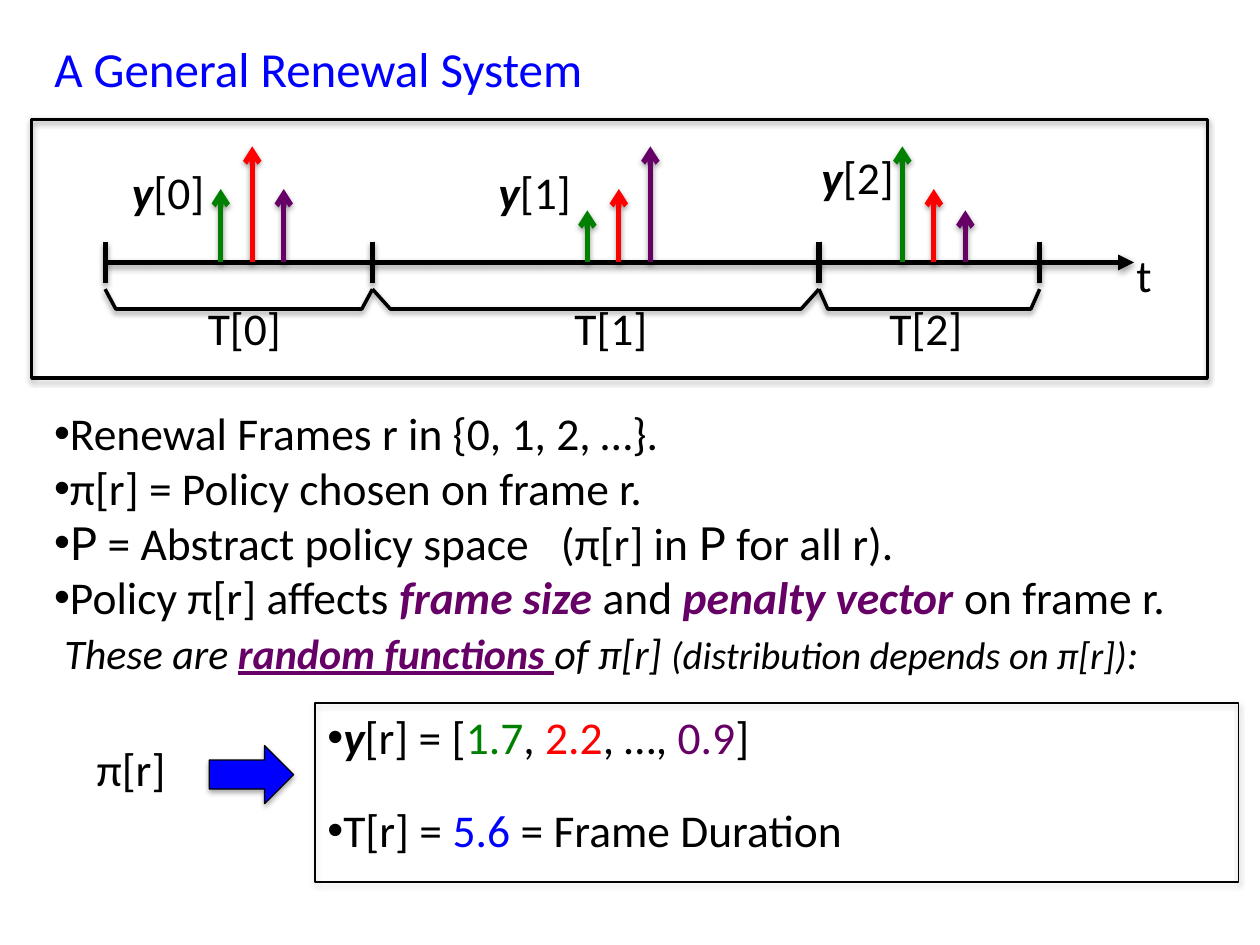
from lxml.etree import SubElement
from pptx import Presentation
from pptx.dml.color import RGBColor
from pptx.enum.shapes import MSO_CONNECTOR, MSO_SHAPE
from pptx.enum.text import MSO_ANCHOR, MSO_AUTO_SIZE, PP_ALIGN
from pptx.oxml.ns import qn
from pptx.util import Cm, Pt

BLACK = RGBColor(0x00, 0x00, 0x00)
BLUE = RGBColor(0x00, 0x00, 0xFF)
GREEN = RGBColor(0x00, 0x80, 0x00)
RED = RGBColor(0xFF, 0x00, 0x00)
PURPLE = RGBColor(0x66, 0x00, 0x66)

AXIS_Y = 5.29
TICKS = [2.12, 7.51, 16.51, 20.96]
SHORT, MEDIUM, TALL = 1.05, 1.48, 2.34
PENALTY_GAP = 0.635
# (first penalty x, penalty heights, y label left, y label top)
FRAMES = [
    (4.45, (MEDIUM, TALL, MEDIUM), 2.41, 3.18),
    (11.84, (SHORT, MEDIUM, TALL), 9.8, 3.18),
    (18.19, (TALL, MEDIUM, SHORT), 16.31, 2.87),
]
VECTOR = {"bold": True, "italic": True}
KEYWORD = {"bold": True, "italic": True, "color": PURPLE}


def add_run(paragraph, text, size=26, color=BLACK, font="Calibri",
            bold=False, italic=False, underline=False, spacing=0):
    """Append formatted text to a paragraph."""
    run = paragraph.add_run()
    run.text = text
    run.font.size = Pt(size)
    run.font.name = font
    run.font.color.rgb = color
    run.font.bold = bold
    run.font.italic = italic
    run.font.underline = underline
    if spacing:
        run.font._element.set("spc", str(spacing * 100))


def add_text(slide, box, *paragraphs, wrap=True, bullets=0, gap=0):
    """Add a text box whose first paragraphs are bulleted."""
    frame = slide.shapes.add_textbox(*map(Cm, box)).text_frame
    frame.word_wrap = wrap
    for index, runs in enumerate(paragraphs):
        paragraph = frame.add_paragraph() if index else frame.paragraphs[0]
        if index and gap:
            paragraph.space_before = Pt(gap)
        if index < bullets:
            properties = paragraph._p.get_or_add_pPr()
            SubElement(properties, qn("a:buFont"), typeface="Arial")
            SubElement(properties, qn("a:buChar"), char="•")
        for text, style in runs:
            add_run(paragraph, text, **style)
    return frame


def style_outline(shape, color, width, opacity=38, arrowhead=None):
    """Give a shape its line, optional arrowhead and soft shadow."""
    shape.line.color.rgb = color
    shape.line.width = Pt(width)
    properties = shape._element.spPr
    if arrowhead:
        SubElement(properties.find(qn("a:ln")), qn("a:tailEnd"), type=arrowhead)
    effects = SubElement(properties, qn("a:effectLst"))
    shadow = SubElement(effects, qn("a:outerShdw"), blurRad="40000",
                        dist="20000", dir="5400000", rotWithShape="0")
    shade = SubElement(shadow, qn("a:srgbClr"), val="000000")
    SubElement(shade, qn("a:alpha"), val=str(opacity * 1000))


def add_line(slide, start, end, color=BLACK, arrowhead=None):
    """Add a straight line between two points."""
    line = slide.shapes.add_connector(
        MSO_CONNECTOR.STRAIGHT, *map(Cm, (*start, *end)))
    style_outline(line, color, 3, arrowhead=arrowhead)


def add_block(slide, kind, box, width, fill=None):
    """Add an outlined preset shape."""
    block = slide.shapes.add_shape(kind, *map(Cm, box))
    if fill is None:
        block.fill.background()
    else:
        block.fill.solid()
        block.fill.fore_color.rgb = fill
    style_outline(block, BLACK, width, opacity=35)


def add_brace(slide, left, right):
    """Add the bracket under one renewal frame."""
    inset = 0.04 * (right - left)
    top, bottom = 5.83, 6.23
    builder = slide.shapes.build_freeform(Cm(left), Cm(top))
    corners = [(left + inset, bottom), (right - inset, bottom), (right, top)]
    builder.add_line_segments([(Cm(x), Cm(y)) for x, y in corners], close=False)
    brace = builder.convert_to_shape()
    brace.fill.background()
    style_outline(brace, BLACK, 2)


def add_title(slide, text):
    """Place and format the slide title."""
    title = slide.shapes.title
    title.left, title.top, title.width, title.height = map(
        Cm, (0.84, 0.64, 23.06, 1.45))
    frame = title.text_frame
    frame.vertical_anchor = MSO_ANCHOR.TOP
    frame.auto_size = MSO_AUTO_SIZE.NONE
    frame.paragraphs[0].alignment = PP_ALIGN.LEFT
    add_run(frame.paragraphs[0], text, size=28, color=BLUE)


def add_timeline(slide):
    """Draw the time axis with its renewal frames and penalties."""
    add_block(slide, MSO_SHAPE.RECTANGLE, (0.64, 2.41, 23.7, 5.21), 2)
    add_line(slide, (TICKS[0], AXIS_Y), (22.86, AXIS_Y), arrowhead="triangle")
    add_text(slide, (22.66, 4.85, 0.81, 1.37), [("t", {})], wrap=False)
    for x in TICKS:
        add_line(slide, (x, AXIS_Y - 0.42), (x, AXIS_Y + 0.42))
    for r, (first, heights, label_left, label_top) in enumerate(FRAMES):
        add_brace(slide, TICKS[r], TICKS[r + 1])
        add_text(slide, (first - 0.51, 5.92, 2.01, 1.37),
                 [(f"T[{r}]", {})], wrap=False)
        add_text(slide, (label_left, label_top, 2.03, 1.37),
                 [("y", VECTOR), (f"[{r}]", {})], wrap=False)
        for i, (height, color) in enumerate(zip(heights, (GREEN, RED, PURPLE))):
            x = first + i * PENALTY_GAP
            add_line(slide, (x, AXIS_Y), (x, AXIS_Y - height), color, "arrow")


def add_definitions(slide):
    """Write the list that defines frames and policies."""
    remark = {"size": 24, "italic": True}
    frame = add_text(
        slide, (0.84, 8.05, 23.06, 5.82),
        [("Renewal Frames r in {0, 1, 2, …}.", {})],
        [("π[r] = Policy chosen on frame r.", {})],
        [("P", {"font": "Lato"}), (" = Abstract policy space", {}),
         (" ", {"spacing": 12}), ("(π[r] in ", {}),
         ("P", {"font": "Lato"}), (" for all r).", {})],
        [("Policy π[r] affects ", {}), ("frame size ", KEYWORD), ("and ", {}),
         ("penalty vector ", KEYWORD), ("on frame r.", {})],
        [(" ", {}), ("These are ", remark),
         ("random functions ", {**KEYWORD, "size": 24, "underline": True}),
         ("of π[r] ", remark),
         ("(distribution depends on π[r])", {"size": 22, "italic": True}),
         (":", remark)],
        bullets=4)
    return frame


def add_outcome(slide):
    """Show a policy leading to its penalty vector and frame duration."""
    add_block(slide, MSO_SHAPE.RECTANGLE, (6.35, 14.17, 18.62, 3.61), 0.75)
    add_text(slide, (1.7, 14.81, 2.34, 1.37), [("π[r]", {})])
    add_block(slide, MSO_SHAPE.RIGHT_ARROW, (4.22, 15.03, 1.7, 1.17), 0.75, BLUE)
    add_text(
        slide, (6.35, 14.17, 14.53, 4.01),
        [("y", VECTOR), ("[r] = [", {}), ("1.7", {"color": GREEN}), (", ", {}),
         ("2.2", {"color": RED}), (", …, ", {}),
         ("0.9", {"color": PURPLE}), ("]", {})],
        [("T[r] = ", {}), ("5.6", {"color": BLUE}), (" = Frame Duration", {})],
        bullets=2, gap=22)


def main():
    """Build and save the renewal system slide."""
    deck = Presentation()
    deck.slide_width, deck.slide_height = Cm(25.4), Cm(19.05)
    slide = deck.slides.add_slide(deck.slide_layouts[5])
    add_title(slide, "A General Renewal System")
    add_timeline(slide)
    add_definitions(slide)
    add_outcome(slide)
    deck.save("out.pptx")


if __name__ == "__main__":
    main()
